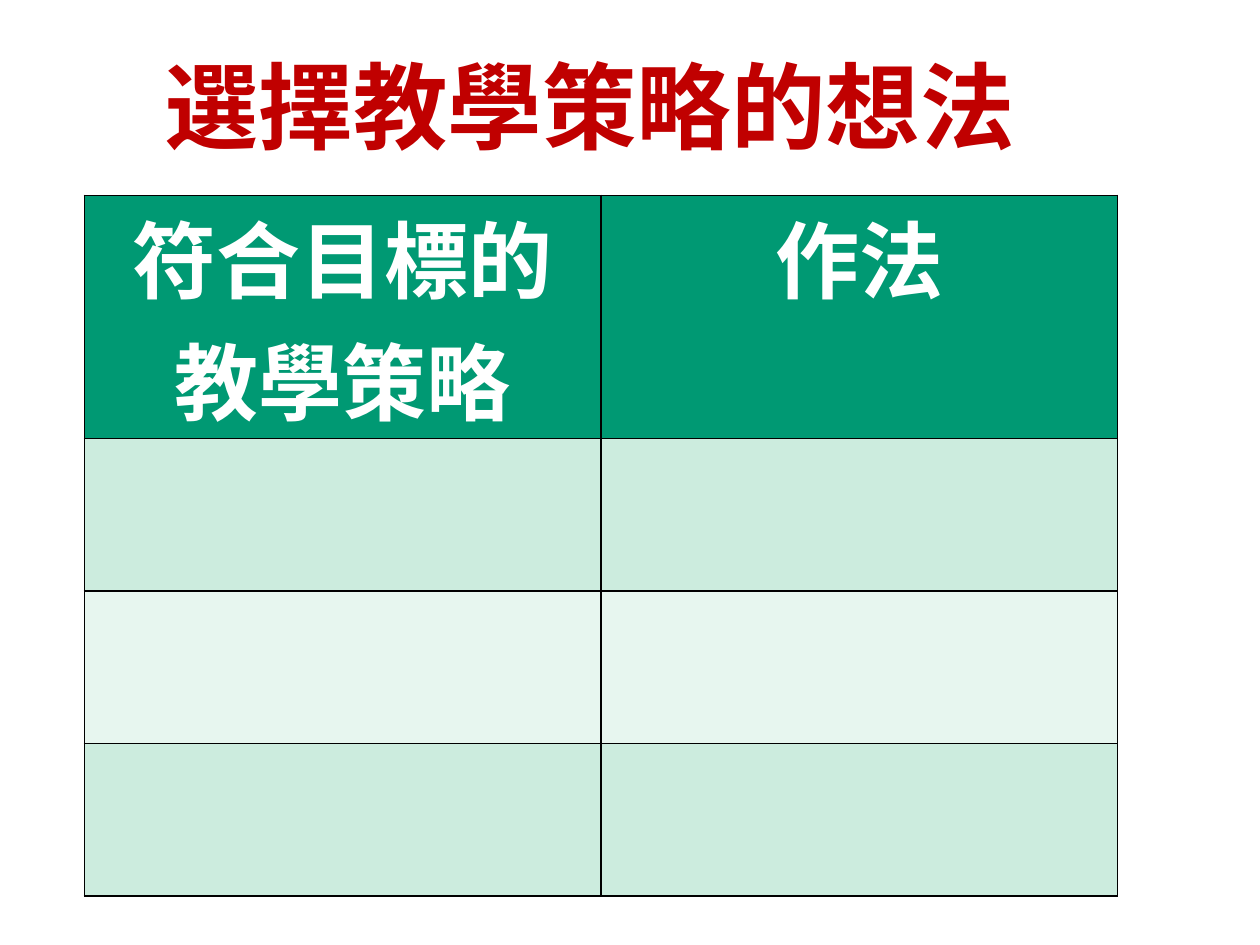
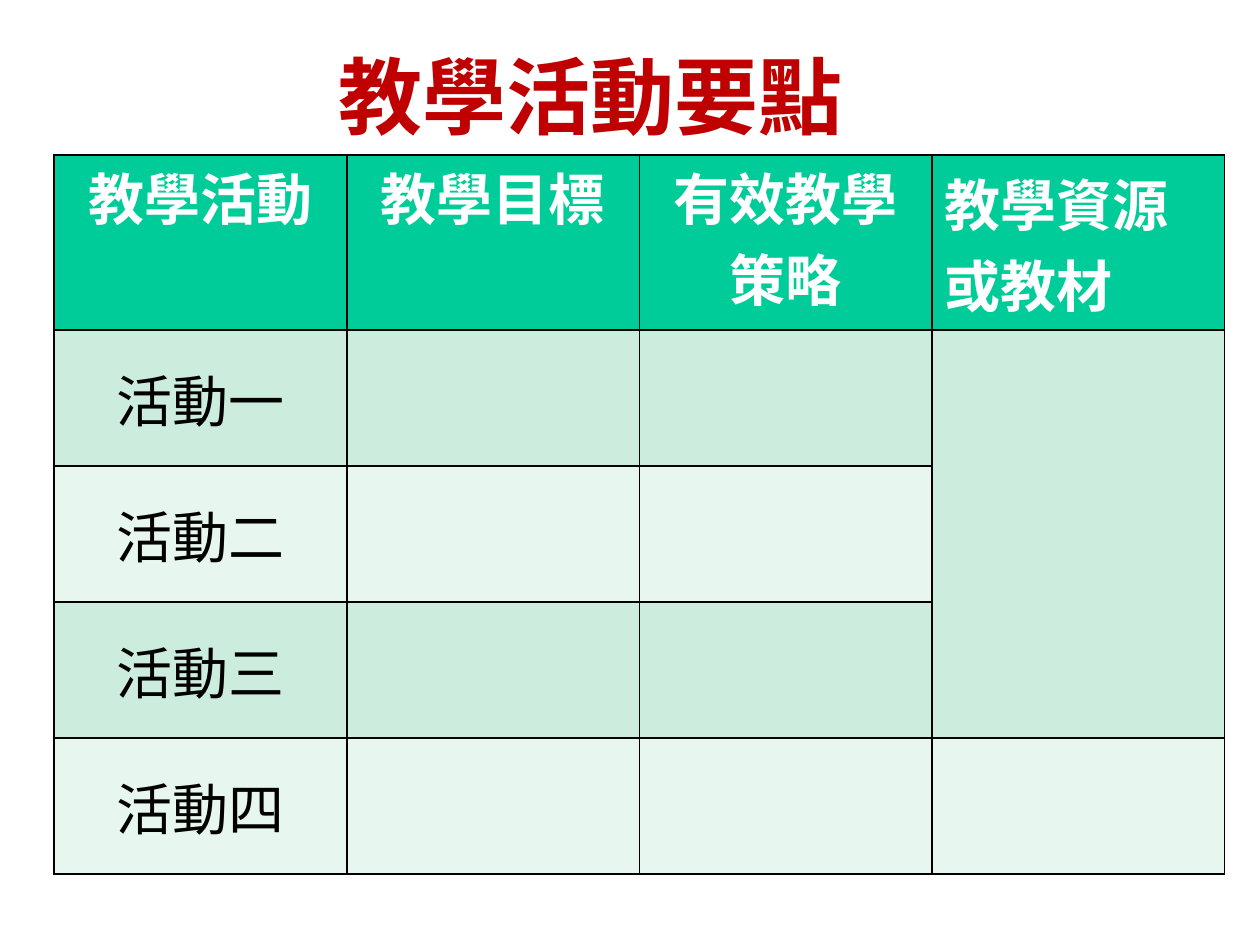
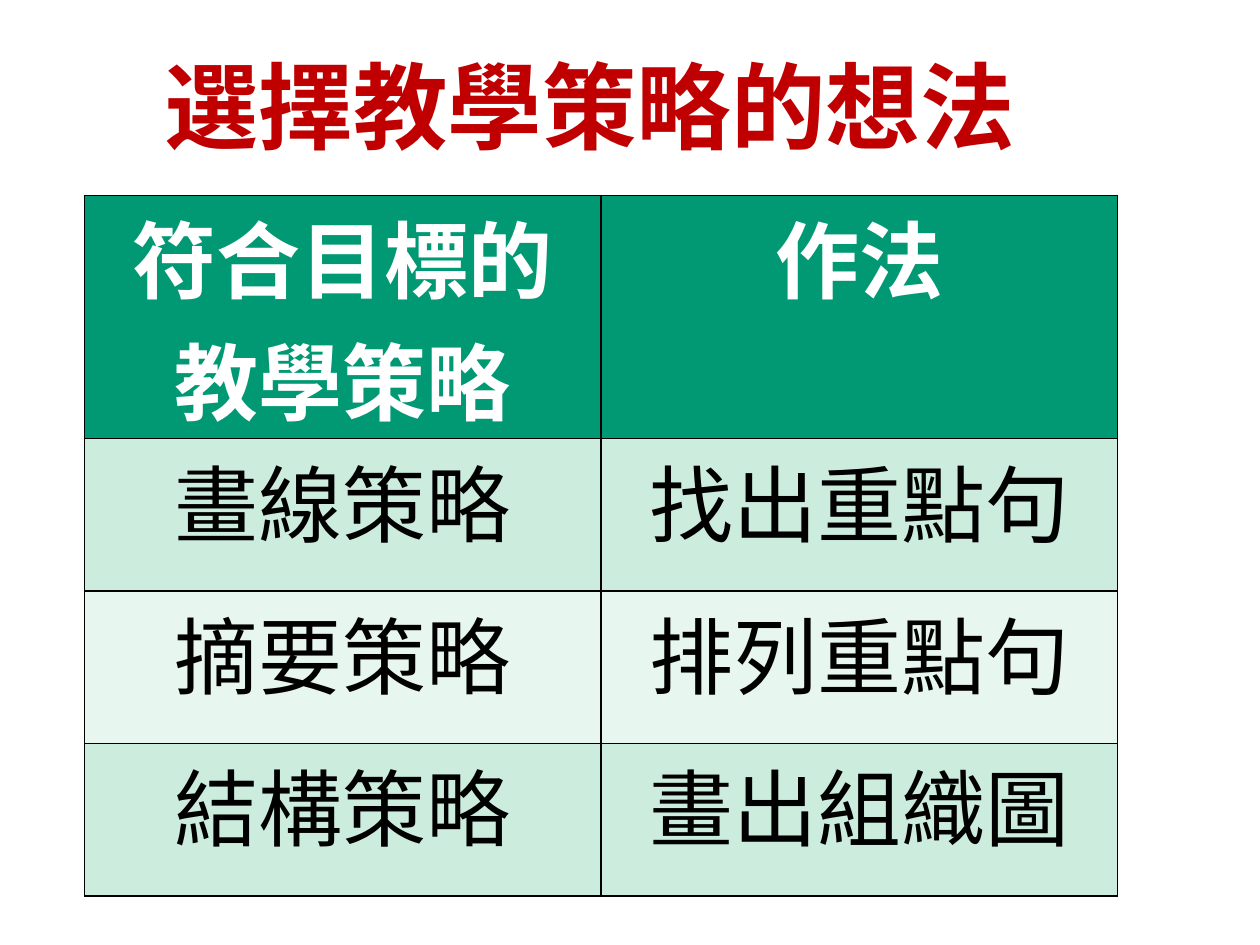
from collections import namedtuple

from lxml.etree import SubElement
from pptx import Presentation
from pptx.dml.color import RGBColor
from pptx.enum.text import MSO_ANCHOR, PP_ALIGN
from pptx.oxml.ns import qn
from pptx.util import Inches, Pt

WIDTH, HEIGHT = Inches(10), Inches(7.5)
TITLE_FONT, TABLE_FONT = "Times New Roman", "Noto Sans CJK SC"
RED, WHITE, BLACK = "C00000", "FFFFFF", "000000"
DEEP_GREEN, BRIGHT_GREEN = "009973", "00CC99"
BANDS = ("CCECDE", "E7F6EF")

Box = namedtuple("Box", "left top width height")
Look = namedtuple("Look", "header_fill size side_inset header_height row_height body_anchor")

STRATEGY_LOOK = Look(DEEP_GREEN, 48, 0.07, 25.75, 16.13, MSO_ANCHOR.TOP)
ACTIVITY_LOOK = Look(BRIGHT_GREEN, 32, 0.02, 18.5, 14.4, MSO_ANCHOR.MIDDLE)

STRATEGY_HEADER = ["符合目標的教學策略", "作法"]
STRATEGIES = [
    ["畫線策略", "找出重點句"],
    ["摘要策略", "排列重點句"],
    ["結構策略", "畫出組織圖"],
]
ACTIVITY_HEADER = ["教學活動", "教學目標", "有效教學\n策略", "教學資源或教材"]
ACTIVITIES = [[f"活動{number}", "", "", ""] for number in "一二三四"]


def color(hex_text):
    """Turn a hex string into a colour."""
    return RGBColor.from_string(hex_text)


def across(percent):
    """Give a percentage of the slide's width."""
    return round(WIDTH * percent / 100)


def down(percent):
    """Give a percentage of the slide's height."""
    return round(HEIGHT * percent / 100)


def place(box):
    """Turn a box in percentages into slide lengths."""
    return across(box.left), down(box.top), across(box.width), down(box.height)


def format_text(frame, font_name, size, hex_text, bold, align=PP_ALIGN.CENTER):
    """Align the paragraphs and format the runs of a text frame."""
    for paragraph in frame.paragraphs:
        paragraph.alignment = align
        for run in paragraph.runs:
            font = run.font
            font.name, font.size, font.bold = font_name, Pt(size), bold
            font.color.rgb = color(hex_text)
            east_asian = SubElement(run._r.get_or_add_rPr(), qn("a:ea"))
            east_asian.set("typeface", TABLE_FONT)


def add_title(slide, box, wording, size):
    """Place the red slide title."""
    frame = slide.shapes.add_textbox(*place(box)).text_frame
    frame.word_wrap = True
    frame.vertical_anchor = MSO_ANCHOR.MIDDLE
    frame.text = wording
    format_text(frame, TITLE_FONT, size, RED, True)


def style_cell(cell, fill):
    """Give a cell its thin black borders and its fill."""
    properties = cell._tc.get_or_add_tcPr()
    for side in ("a:lnL", "a:lnR", "a:lnT", "a:lnB"):
        line = SubElement(properties, qn(side), w=str(Pt(1)))
        SubElement(SubElement(line, qn("a:solidFill")), qn("a:srgbClr"), val=BLACK)
    cell.fill.solid()
    cell.fill.fore_color.rgb = color(fill)


def write_cell(cell, wording, look, is_header):
    """Write a centred header or body cell."""
    cell.margin_left = cell.margin_right = Inches(look.side_inset)
    cell.margin_top = cell.margin_bottom = 0
    cell.vertical_anchor = MSO_ANCHOR.TOP if is_header else look.body_anchor
    cell.text_frame.text = wording
    format_text(cell.text_frame, TABLE_FONT, look.size, WHITE if is_header else BLACK, is_header)


def add_grid(slide, left, top, width, header, body, look):
    """Build a banded table under its header row and return it."""
    rows = [header] + body
    box = Box(left, top, width, look.header_height + look.row_height * len(body))
    table = slide.shapes.add_table(len(rows), len(header), *place(box)).table
    table.first_row = table.horz_banding = False
    for column in table.columns:
        column.width = across(width / len(header))
    for index, wordings in enumerate(rows):
        is_header = index == 0
        table.rows[index].height = down(look.header_height if is_header else look.row_height)
        fill = look.header_fill if is_header else BANDS[(index - 1) % 2]
        for cell, wording in zip(table.rows[index].cells, wordings):
            style_cell(cell, fill)
            if wording:
                write_cell(cell, wording, look, is_header)
    return table


def strategy_slide(slide, body):
    """Build a slide that pairs strategies with methods."""
    add_title(slide, Box(4.3, 2.8, 85, 16.67), "選擇教學策略的想法", 54)
    add_grid(slide, 6.7, 20.67, 82, STRATEGY_HEADER, body, STRATEGY_LOOK)


def activity_slide(slide):
    """Build the slide of activities with a shared resource cell."""
    add_title(slide, Box(5.9, 1.73, 82, 16.67), "教學活動要點", 48)
    table = add_grid(slide, 4.3, 16.4, 92.9, ACTIVITY_HEADER, ACTIVITIES, ACTIVITY_LOOK)
    resources = table.cell(0, 3)
    resources.margin_left = resources.margin_right = Inches(0.1)
    resources.margin_top = resources.margin_bottom = Inches(0.05)
    resources.text_frame.paragraphs[0].alignment = PP_ALIGN.LEFT
    table.cell(1, 3).merge(table.cell(3, 3))


def main():
    """Build the three slides and save them."""
    deck = Presentation()
    deck.slide_width, deck.slide_height = WIDTH, HEIGHT
    blank = deck.slide_layouts[6]
    strategy_slide(deck.slides.add_slide(blank), [["", ""] for _ in STRATEGIES])
    activity_slide(deck.slides.add_slide(blank))
    strategy_slide(deck.slides.add_slide(blank), STRATEGIES)
    deck.save("out.pptx")


if __name__ == "__main__":
    main()
